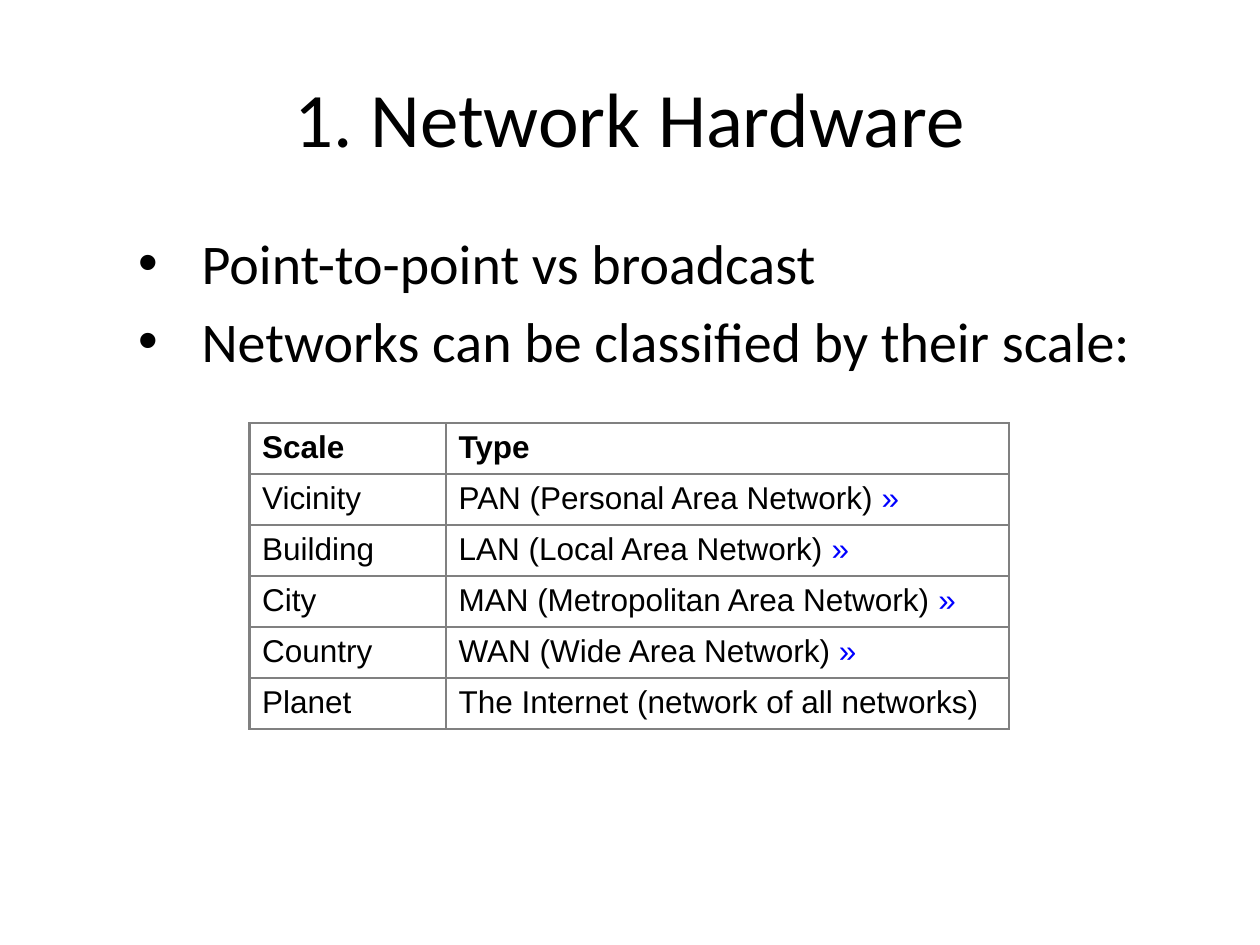
from typing import NamedTuple

from lxml import etree
from pptx import Presentation
from pptx import util as u
from pptx.dml.color import RGBColor
from pptx.enum import text
from pptx.oxml import ns

COLORS = {"ink": "000000", "marker": "0000FF", "border": "808080"}
SLIDE_W, SLIDE_H = 10, 7.5


class Box(NamedTuple):
    left: float
    top: float
    width: float
    height: float

    def lengths(self) -> list[int]:
        return [u.Inches(value) for value in self]


class NetworkScale(NamedTuple):
    scale: str
    network: str
    marked: bool = True


TITLE_BOX = Box(0.5, 0.3, 9, 1.25)
POINTS_BOX = Box(1, 1.76, 8.52, 5.03)
POINTS = ["Point-to-point vs broadcast", "Networks can be classified by their scale:"]
HEADER = NetworkScale("Scale", "Type", marked=False)
SCALES = [
    NetworkScale("Vicinity", "PAN (Personal Area Network) "),
    NetworkScale("Building", "LAN (Local Area Network) "),
    NetworkScale("City", "MAN (Metropolitan Area Network) "),
    NetworkScale("Country", "WAN (Wide Area Network) "),
    NetworkScale("Planet", "The Internet (network of all networks)", marked=False),
]
COLUMN_WIDTHS = [1.56, 4.47]
ROWS = [HEADER, *SCALES]
TABLE_BOX = Box(1.98, 3.36, sum(COLUMN_WIDTHS), 2.43)


def format_run(run, font: str, size: float, color: str, bold: bool = False) -> None:
    run.font.name = font
    run.font.size = u.Pt(size)
    run.font.bold = bold
    run.font.color.rgb = RGBColor.from_string(COLORS[color])


def fill_placeholder(holder, box: Box, lines: list[str], size: float) -> None:
    holder.left, holder.top, holder.width, holder.height = box.lengths()
    holder.text_frame.text = "\n".join(lines)
    for paragraph in holder.text_frame.paragraphs:
        for run in paragraph.runs:
            format_run(run, "Calibri", size, "ink")


def add_borders(cell, width: float) -> None:
    properties = cell._tc.get_or_add_tcPr()
    for side in ("lnL", "lnR", "lnT", "lnB"):
        line = etree.SubElement(properties, ns.qn(f"a:{side}"), w=str(u.Pt(width)))
        fill = etree.SubElement(line, ns.qn("a:solidFill"))
        etree.SubElement(fill, ns.qn("a:srgbClr"), val=COLORS["border"])


def write_cell(cell, words: str, bold: bool, marked: bool) -> None:
    add_borders(cell, 1.5)
    cell.fill.background()
    paragraph = cell.text_frame.paragraphs[0]
    paragraph.text = words
    format_run(paragraph.runs[0], "Arial", 18, "ink", bold)
    if marked:
        marker = paragraph.add_run()
        marker.text = "»"
        format_run(marker, "Arial", 18, "marker")


def add_scale_table(slide) -> None:
    table = slide.shapes.add_table(len(ROWS), len(COLUMN_WIDTHS), *TABLE_BOX.lengths()).table
    table.first_row = table.horz_banding = False
    for column, width in zip(table.columns, COLUMN_WIDTHS):
        column.width = u.Inches(width)
    for index, entry in enumerate(ROWS):
        is_header = entry is HEADER
        write_cell(table.cell(index, 0), entry.scale, is_header, False)
        write_cell(table.cell(index, 1), entry.network, is_header, entry.marked)


def main() -> None:
    deck = Presentation()
    deck.slide_width, deck.slide_height = u.Inches(SLIDE_W), u.Inches(SLIDE_H)
    slide = deck.slides.add_slide(deck.slide_layouts[1])

    # Title
    title = slide.shapes.title
    fill_placeholder(title, TITLE_BOX, ["1. Network Hardware"], 44)
    title.text_frame.vertical_anchor = text.MSO_ANCHOR.MIDDLE

    # Bulleted points, with a hanging indent
    points = slide.placeholders[1]
    fill_placeholder(points, POINTS_BOX, POINTS, 32)
    for paragraph in points.text_frame.paragraphs:
        properties = paragraph._p.get_or_add_pPr()
        properties.set("marL", str(u.Inches(0.5)))
        properties.set("indent", str(u.Inches(-0.5)))

    # Networks by scale
    add_scale_table(slide)

    deck.save("out.pptx")


if __name__ == "__main__":
    main()
